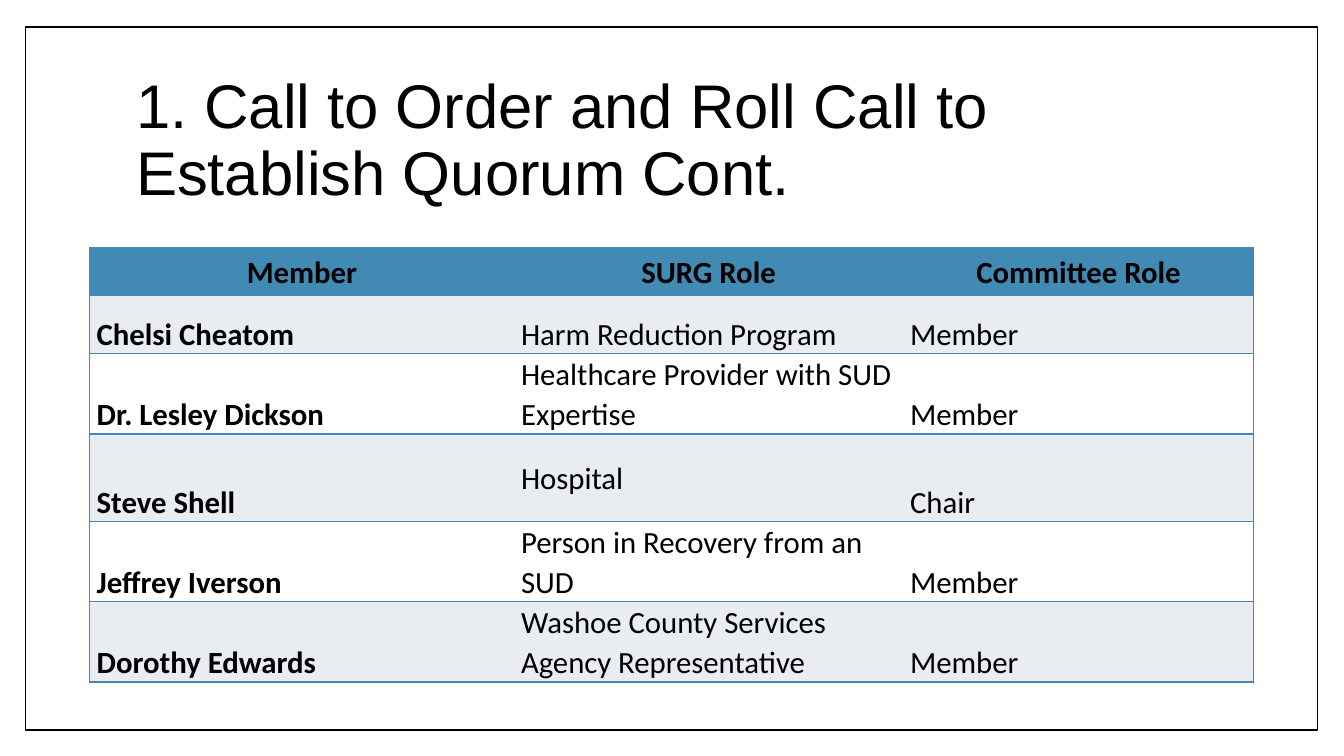
from dataclasses import dataclass

from lxml.etree import SubElement
from pptx import Presentation
from pptx.dml.color import RGBColor
from pptx.enum.shapes import MSO_SHAPE as Shape
from pptx.enum.text import MSO_ANCHOR as Anchor, MSO_AUTO_SIZE as AutoSize, PP_ALIGN as Align
from pptx.oxml.ns import qn
from pptx.util import Pt

TITLE = "1. Call to Order and Roll Call to Establish Quorum Cont."
HEADER = ("Member", "SURG Role", "Committee Role")
MEMBERS = [
    ("Chelsi Cheatom", "Harm Reduction Program", "Member"),
    ("Dr. Lesley Dickson", "Healthcare Provider with SUD Expertise", "Member"),
    ("Steve Shell", "Hospital", "Chair"),
    ("Jeffrey Iverson", "Person in Recovery from an SUD", "Member"),
    ("Dorothy Edwards", "Washoe County Services Agency Representative", "Member"),
]
CENTERED_CELL = "Hospital"

SLIDE_SIZE = (960, 540)
FRAME_BOX = (18, 19.4, 923, 502)
TITLE_BOX = (90, 48.2, 777.6, 106.6)
TABLE_ORIGIN = (64.1, 177.1)
COLUMN_WIDTHS = (303.1, 277.9, 250.6)
ROW_HEIGHTS = (33.8, 41.8, 53.3, 62.6, 53.3, 53.3)
CELL_INSET = 5


@dataclass(frozen=True)
class Theme:
    ink: str = "000000"
    paper: str = "FFFFFF"
    accent: str = "418AB3"
    band: str = "E9EDF2"
    title_font: str = "Arial"
    table_font: str = "Calibri"
    title_size: float = 44
    table_size: float = 22
    line_width: float = 1


THEME = Theme()


def points(values):
    return [Pt(value) for value in values]


def paint(fill, color):
    fill.solid()
    fill.fore_color.rgb = RGBColor.from_string(color)


def set_font(para, name, size, bold=False):
    para.font.name = name
    para.font.size = Pt(size)
    para.font.bold = bold
    para.font.color.rgb = RGBColor.from_string(THEME.ink)


def set_borders(cell, visible_sides):
    """Draw the sides named by letter (L, R, T, B) and hide the others."""
    properties = cell._tc.get_or_add_tcPr()
    for position, side in enumerate("LRTB"):
        line = SubElement(properties, qn(f"a:ln{side}"), w=str(Pt(THEME.line_width)))
        if side in visible_sides:
            solid = SubElement(line, qn("a:solidFill"))
            SubElement(solid, qn("a:srgbClr"), val=THEME.accent)
        else:
            SubElement(line, qn("a:noFill"))
        properties.insert(position, line)


def add_title(slide):
    title = slide.shapes.title
    title.left, title.top, title.width, title.height = points(TITLE_BOX)
    title.text = TITLE
    title.text_frame.word_wrap = True
    title.text_frame.auto_size = AutoSize.NONE
    title.text_frame.vertical_anchor = Anchor.MIDDLE
    para = title.text_frame.paragraphs[0]
    para.alignment = Align.LEFT
    para.line_spacing = 0.9
    set_font(para, THEME.title_font, THEME.title_size)


def add_frame(slide):
    """Add the bordered page panel behind the title."""
    frame = slide.shapes.add_shape(Shape.RECTANGLE, *points(FRAME_BOX))
    frame.shadow.inherit = False
    paint(frame.fill, THEME.paper)
    paint(frame.line.fill, THEME.ink)
    frame.line.width = Pt(THEME.line_width)
    slide.shapes.title.element.addprevious(frame.element)


def fill_cell(cell, text, row, column):
    is_header = row == 0
    cell.text = text
    cell.margin_left = cell.margin_right = Pt(CELL_INSET)
    cell.margin_top = cell.margin_bottom = 0
    centered = is_header or text == CENTERED_CELL
    cell.vertical_anchor = Anchor.MIDDLE if centered else Anchor.BOTTOM
    para = cell.text_frame.paragraphs[0]
    para.alignment = Align.CENTER if is_header else Align.LEFT
    para.line_spacing = 1.07
    set_font(para, THEME.table_font, THEME.table_size, bold=is_header or column == 0)
    band = THEME.band if row % 2 else THEME.paper
    paint(cell.fill, THEME.accent if is_header else band)
    outer_side = {0: "L", len(HEADER) - 1: "R"}.get(column, "")
    set_borders(cell, "TB" + outer_side)


def add_roll_call(slide):
    rows = [HEADER, *MEMBERS]
    size = (sum(COLUMN_WIDTHS), sum(ROW_HEIGHTS))
    table = slide.shapes.add_table(
        len(rows), len(HEADER), *points(TABLE_ORIGIN + size)).table
    for column, width in zip(table.columns, COLUMN_WIDTHS):
        column.width = Pt(width)
    for row, height in zip(table.rows, ROW_HEIGHTS):
        row.height = Pt(height)
    for row, texts in enumerate(rows):
        for column, text in enumerate(texts):
            fill_cell(table.cell(row, column), text, row, column)


def main():
    deck = Presentation()
    deck.slide_width, deck.slide_height = points(SLIDE_SIZE)
    slide = deck.slides.add_slide(deck.slide_layouts.get_by_name("Title Only"))
    paint(slide.background.fill, THEME.paper)
    add_title(slide)
    add_frame(slide)
    add_roll_call(slide)
    deck.save("out.pptx")


if __name__ == "__main__":
    main()
